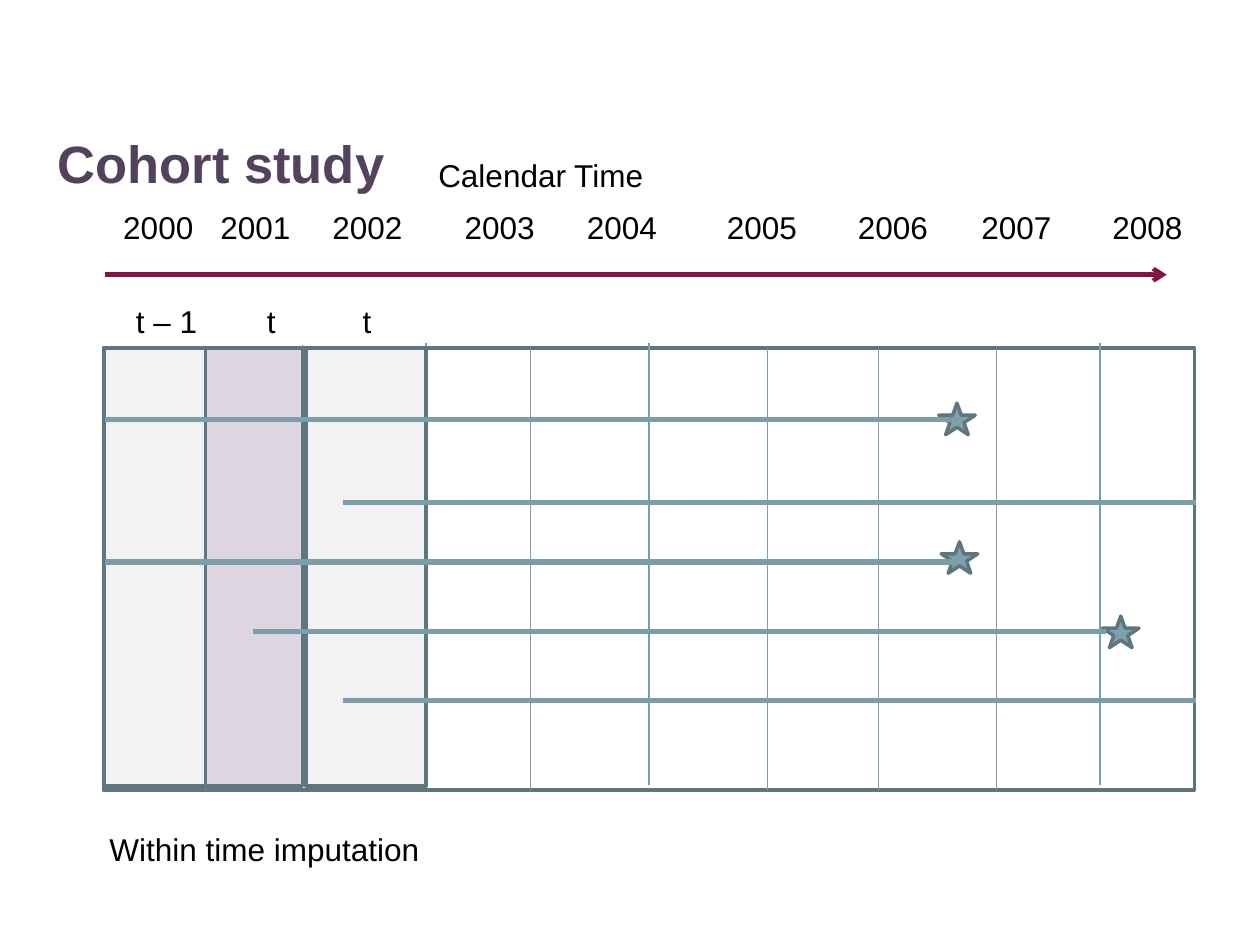
"""Build the cohort study timeline slide."""
from lxml.etree import SubElement
from pptx import Presentation
from pptx.dml.color import RGBColor
from pptx.enum.shapes import MSO_CONNECTOR, MSO_SHAPE
from pptx.enum.text import MSO_ANCHOR, PP_ALIGN
from pptx.oxml.ns import qn
from pptx.util import Inches, Pt

PLUM = RGBColor(0x52, 0x42, 0x5B)
BLACK = RGBColor(0x00, 0x00, 0x00)
STEEL = RGBColor(0x7B, 0x9E, 0xA9)
STAR_FILL = RGBColor(0x7F, 0xA1, 0xAC)
OUTLINE = RGBColor(0x5E, 0x77, 0x7F)
CRIMSON = RGBColor(0x83, 0x12, 0x48)
LILAC = RGBColor(0xDD, 0xD6, 0xE1)
GREY = RGBColor(0xF2, 0xF2, 0xF2)

TITLE = "Cohort study"
AXIS_LABEL = "Calendar Time"
FOOTNOTE = "Within time imputation"
YEARS = [str(year) for year in range(2000, 2009)]
YEAR_TABS = [0.77, 1.66, 2.71, 3.68, 4.79, 5.83, 6.81, 7.85]
PERIODS = ["t – 1", "t", "t"]
PERIOD_TABS = [1.04, 1.8]

GRID_LEFT, GRID_TOP, GRID_WIDTH, GRID_HEIGHT = 0.82, 2.76, 8.66, 3.51
YEAR_LINES = [(1.63, 2.76), (6.09, 2.76), (6.97, 2.76), (7.91, 2.76), (8.73, 2.72),
              (3.38, 2.72), (4.21, 2.76), (5.15, 2.72), (2.4, 2.74)]
BAND_HEIGHT = 3.48
BANDS = [(1.63, 0.77, LILAC), (0.83, 0.8, GREY), (2.43, 0.95, GREY)]
FOLLOW_UP = 6.77
SUBJECTS = [(0.83, 3.33), (0.83, 4.46), (2.72, 3.99), (2.01, 5.01), (2.72, 5.56)]
EVENTS = [(7.45, 3.2), (7.47, 4.3), (8.75, 4.89)]


def write(box, text, size=18, color=BLACK, bold=False, tabs=()):
    frame = box.text_frame
    frame.word_wrap = True
    frame.vertical_anchor = MSO_ANCHOR.TOP
    para = frame.paragraphs[0]
    para.alignment = PP_ALIGN.LEFT
    if tabs:
        stops = SubElement(para._p.get_or_add_pPr(), qn("a:tabLst"))
        for tab in tabs:
            SubElement(stops, qn("a:tab"), pos=str(Inches(tab)), algn="l")
    span = para.add_run()
    span.text = text
    span.font.name = "Arial"
    span.font.size = Pt(size)
    span.font.bold = bold
    span.font.color.rgb = color


def add_label(page, text, left, top, width, **style):
    box = page.shapes.add_textbox(Inches(left), Inches(top), Inches(width), Inches(0.4))
    write(box, text, **style)


def add_outlined(page, kind, left, top, width, height, fill=None):
    shape = page.shapes.add_shape(kind, Inches(left), Inches(top), Inches(width), Inches(height))
    shape.shadow.inherit = False
    if fill is None:
        shape.fill.background()
    else:
        shape.fill.solid()
        shape.fill.fore_color.rgb = fill
    shape.line.color.rgb = OUTLINE
    shape.line.width = Pt(2)


def add_line(page, start, end, color, width, arrow=False):
    line = page.shapes.add_connector(MSO_CONNECTOR.STRAIGHT, *map(Inches, start + end))
    line.line.color.rgb = color
    line.line.width = Pt(width)
    if arrow:
        SubElement(line.line._get_or_add_ln(), qn("a:tailEnd"), type="arrow")
    SubElement(line._element.spPr, qn("a:effectLst"))


def main():
    deck = Presentation()
    deck.slide_width, deck.slide_height = Inches(10), Inches(7.5)
    page = deck.slides.add_slide(deck.slide_layouts[5])

    title = page.shapes.title
    title.left, title.top = Inches(0.36), Inches(0.99)
    title.width, title.height = Inches(9.28), Inches(1.42)
    write(title, TITLE, size=30, color=PLUM, bold=True)

    for left, top in EVENTS:
        add_outlined(page, MSO_SHAPE.STAR_5_POINT, left, top, 0.29, 0.25, STAR_FILL)
    add_outlined(page, MSO_SHAPE.RECTANGLE, GRID_LEFT, GRID_TOP, GRID_WIDTH, GRID_HEIGHT)
    for x, top in YEAR_LINES:
        add_line(page, (x, top), (x, top + GRID_HEIGHT), STEEL, 0.75)

    add_line(page, (0.83, 2.18), (9.26, 2.18), CRIMSON, 2.5, arrow=True)
    add_label(page, AXIS_LABEL, 3.38, 1.19, 1.92)
    add_label(page, "\t".join(YEARS), 0.88, 1.6, 9.6, tabs=YEAR_TABS)
    add_label(page, "\t".join(PERIODS), 0.98, 2.35, 2.23, tabs=PERIOD_TABS)

    for left, width, fill in BANDS:
        add_outlined(page, MSO_SHAPE.RECTANGLE, left, GRID_TOP, width, BAND_HEIGHT, fill)
    for left, y in SUBJECTS:
        add_line(page, (left, y), (left + FOLLOW_UP, y), STEEL, 3)
    add_label(page, FOOTNOTE, 0.77, 6.54, 2.67)

    deck.save("out.pptx")


if __name__ == "__main__":
    main()
